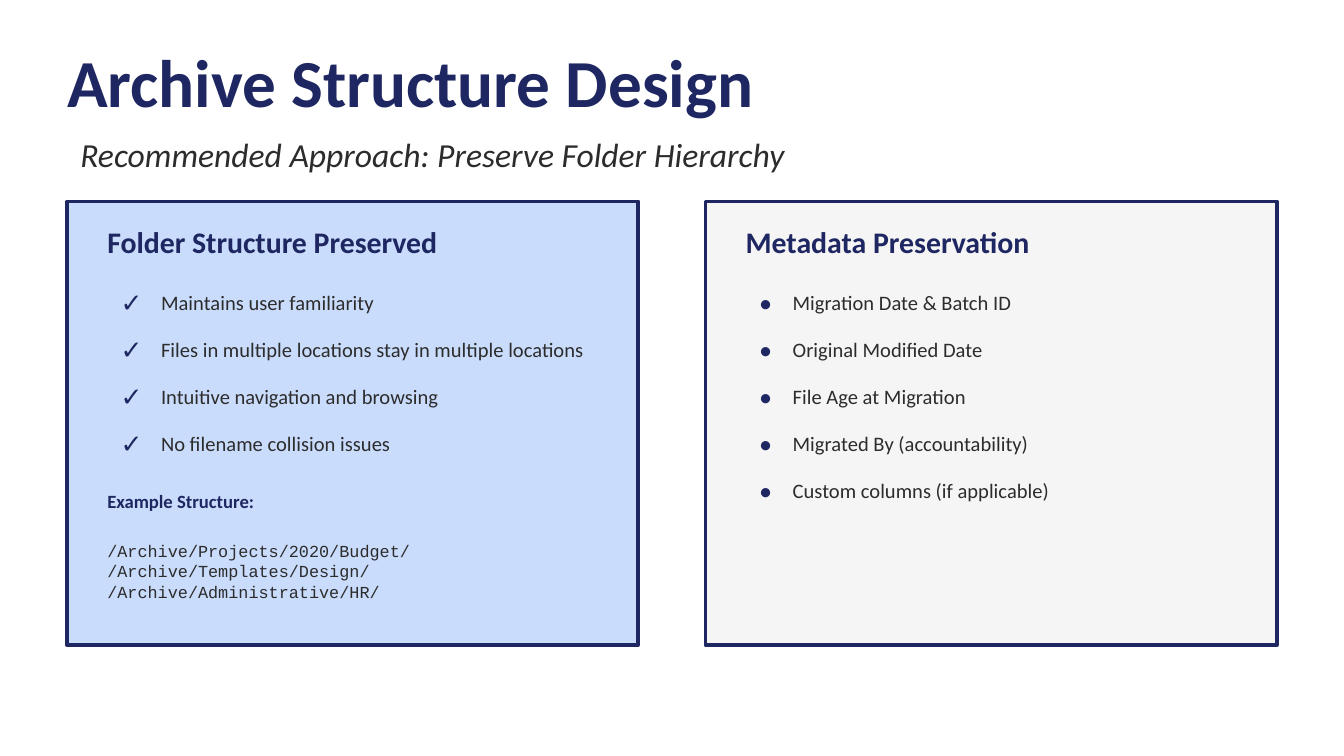
from pptx import Presentation
from pptx.dml.color import RGBColor
from pptx.enum.shapes import MSO_SHAPE
from pptx.enum.text import MSO_ANCHOR
from pptx.util import Emu, Pt

RECTANGLE = MSO_SHAPE.RECTANGLE
MIDDLE = MSO_ANCHOR.MIDDLE

NAVY = RGBColor(0x1E, 0x27, 0x61)
CHARCOAL = RGBColor(0x2C, 0x2C, 0x2C)
ICE_BLUE = RGBColor(0xCA, 0xDC, 0xFC)
PALE_GREY = RGBColor(0xF5, 0xF5, 0xF5)

EMU_PER_PX = 4572  # 200 px to the inch
SLIDE_WIDTH, SLIDE_HEIGHT = 2000, 1125
MARGIN = 100
CARD_TOP, CARD_WIDTH, CARD_HEIGHT = 300, 850, 660
CARD_PADDING = 40
CARD_TEXT_WIDTH = CARD_WIDTH - 2 * CARD_PADDING
RIGHT_CARD = SLIDE_WIDTH - MARGIN - CARD_WIDTH
LIST_TOP, LIST_PITCH, ROW_HEIGHT = 420, 70, 60
LIST_INDENT = 60

BENEFITS = [
    "Maintains user familiarity",
    "Files in multiple locations stay in multiple locations",
    "Intuitive navigation and browsing",
    "No filename collision issues",
]
METADATA = [
    "Migration Date & Batch ID",
    "Original Modified Date",
    "File Age at Migration",
    "Migrated By (accountability)",
    "Custom columns (if applicable)",
]
EXAMPLE_PATHS = [
    "/Archive/Projects/2020/Budget/",
    "/Archive/Templates/Design/",
    "/Archive/Administrative/HR/",
]


def px(*lengths):
    """Turn px lengths into EMU."""
    return [Emu(length * EMU_PER_PX) for length in lengths]


class SlideBuilder:
    """Holds the text style and the slide being built."""

    font = "Calibri"
    code_font = "Courier New"

    def __init__(self, slide):
        self.slide = slide

    def text(self, lines, left, top, width, height, *, size, color=CHARCOAL,
             font=None, bold=False, italic=False, inset=True):
        """Add a text box with one paragraph for each line."""
        box = self.slide.shapes.add_textbox(*px(left, top, width, height))
        frame = box.text_frame
        frame.word_wrap = True
        frame.vertical_anchor = MIDDLE
        if not inset:
            frame.margin_left = frame.margin_right = 0
            frame.margin_top = frame.margin_bottom = 0
        frame.text = "\n".join(lines)
        for paragraph in frame.paragraphs:
            for run in paragraph.runs:
                run.font.name = font or self.font
                run.font.size = Pt(size)
                run.font.bold = bold
                run.font.italic = italic
                run.font.color.rgb = color

    def card(self, heading, left, fill):
        panel = self.slide.shapes.add_shape(
            RECTANGLE, *px(left, CARD_TOP, CARD_WIDTH, CARD_HEIGHT))
        panel.shadow.inherit = False
        panel.fill.solid()
        panel.fill.fore_color.rgb = fill
        panel.line.color.rgb = NAVY
        panel.line.width = Pt(2)
        self.text([heading], left + CARD_PADDING, CARD_TOP + 30,
                  CARD_TEXT_WIDTH, 60, size=16, color=NAVY, bold=True)

    def marked_list(self, items, card_left, marker, *, marker_width,
                    item_offset, item_width, bold_marker=False):
        """Add rows of a marker and an item, one pitch apart."""
        left = card_left + LIST_INDENT
        for row, item in enumerate(items):
            top = LIST_TOP + row * LIST_PITCH
            self.text([marker], left, top, marker_width, ROW_HEIGHT,
                      size=14, color=NAVY, bold=bold_marker)
            self.text([item], left + item_offset, top, item_width, ROW_HEIGHT,
                      size=11)


def main():
    deck = Presentation()
    deck.slide_width, deck.slide_height = px(SLIDE_WIDTH, SLIDE_HEIGHT)
    builder = SlideBuilder(deck.slides.add_slide(deck.slide_layouts[6]))

    full_width = SLIDE_WIDTH - 2 * MARGIN
    builder.text(["Archive Structure Design"], MARGIN, 60, full_width, 120,
                 size=36, color=NAVY, bold=True, inset=False)
    builder.text(["Recommended Approach: Preserve Folder Hierarchy"],
                 MARGIN, 200, full_width, 60, size=18, italic=True)

    builder.card("Folder Structure Preserved", MARGIN, ICE_BLUE)
    builder.marked_list(BENEFITS, MARGIN, "✓", marker_width=60,
                        item_offset=60, item_width=680, bold_marker=True)
    example_left = MARGIN + CARD_PADDING
    builder.text(["Example Structure:"], example_left, 720, CARD_TEXT_WIDTH, 50,
                 size=10, color=NAVY, bold=True)
    builder.text(EXAMPLE_PATHS, example_left, 770, CARD_TEXT_WIDTH, 160,
                 size=9, font=builder.code_font)

    builder.card("Metadata Preservation", RIGHT_CARD, PALE_GREY)
    builder.marked_list(METADATA, RIGHT_CARD, "•", marker_width=40,
                        item_offset=50, item_width=700)

    deck.save("out.pptx")


if __name__ == "__main__":
    main()
